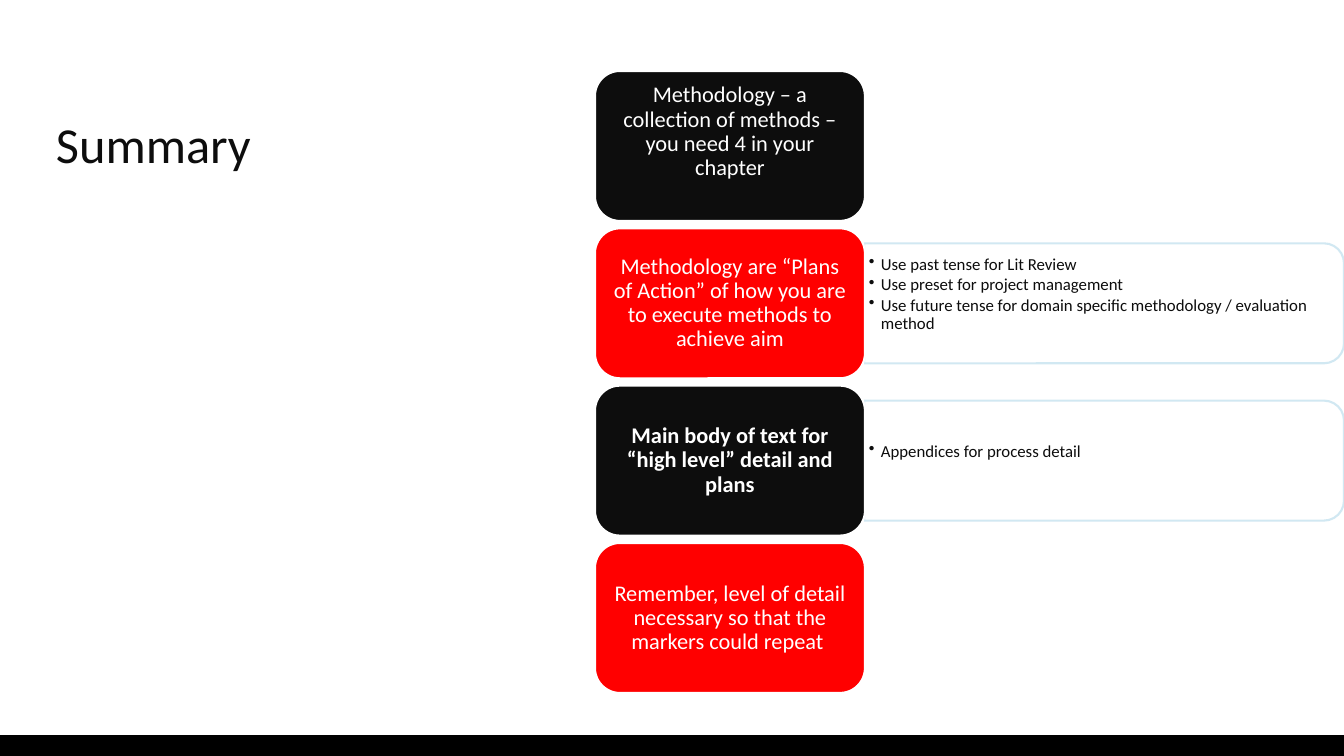
import pptx
import pptx.util
import pptx.dml.color
import pptx.enum.shapes
import pptx.enum.text
import pptx.oxml.ns
import lxml.etree

BLACK = pptx.dml.color.RGBColor(0x00, 0x00, 0x00)
INK = pptx.dml.color.RGBColor(0x0D, 0x0D, 0x0D)
RED = pptx.dml.color.RGBColor(0xFF, 0x00, 0x00)
WHITE = pptx.dml.color.RGBColor(0xFF, 0xFF, 0xFF)
PALE_BLUE = pptx.dml.color.RGBColor(0xCD, 0xE6, 0xF1)

TITLE = "Summary"
STEPS = [
    {"text": "Methodology – a collection of methods – you need 4 in your chapter",
     "color": INK, "lift": 28},
    {"text": "Methodology are “Plans of Action” of how you are to execute methods to achieve aim",
     "color": RED,
     "details": ["Use past tense for Lit Review",
                 "Use preset for project management",
                 "Use future tense for domain specific methodology / evaluation method"]},
    {"text": "Main body of text for “high level” detail and plans",
     "color": INK, "bold": True,
     "details": ["Appendices for process detail"]},
    {"text": "Remember, level of detail necessary so that the markers could repeat ",
     "color": RED},
]

FONT = "Calibri"
SLIDE_W, SLIDE_H = 1344, 756
FOOTER_H = 21
CARD_LEFT, CARD_W, CARD_H = 595, 270, 150
FIRST_TOP, LAST_TOP = 71, 543
PANEL_LEFT, PANEL_W, PANEL_H = 864, 480, 120
DETAIL_W, DETAIL_H, DETAIL_LIFT = 474, 108, 18
BULLET_INDENT = 12
SHAPES = pptx.enum.shapes.MSO_SHAPE
ALIGN = pptx.enum.text.PP_ALIGN


def px(length):
    return pptx.util.Emu(round(length * 914400 / 100.8))


def add_block(kind, left, top, width, height, fill, line=None):
    block = slide.shapes.add_shape(kind, px(left), px(top), px(width), px(height))
    block.shadow.inherit = False
    block.fill.solid()
    block.fill.fore_color.rgb = fill
    if line is None:
        block.line.fill.background()
    else:
        block.line.color.rgb = line
        block.line.width = pptx.util.Pt(1.5)
    return block


def add_box(left, top, width, height):
    return slide.shapes.add_textbox(px(left), px(top), px(width), px(height))


def write(holder, lines, size, color, insets, align=ALIGN.LEFT, after=0, bold=False, bullets=False):
    frame = holder.text_frame
    frame.word_wrap = True
    frame.vertical_anchor = pptx.enum.text.MSO_ANCHOR.MIDDLE
    frame.margin_left, frame.margin_top, frame.margin_right, frame.margin_bottom = map(px, insets)
    frame.text = "\n".join(lines)
    for paragraph in frame.paragraphs:
        if bullets:
            properties = paragraph._p.get_or_add_pPr()
            properties.set("marL", str(px(BULLET_INDENT)))
            properties.set("indent", str(-px(BULLET_INDENT)))
            bullet = lxml.etree.SubElement(properties, pptx.oxml.ns.qn("a:buChar"))
            bullet.set("char", "•")
        paragraph.alignment = align
        paragraph.line_spacing = 0.9
        paragraph.space_after = pptx.util.Pt(after)
        for run in paragraph.runs:
            run.font.name = FONT
            run.font.size = pptx.util.Pt(size)
            run.font.bold = bold
            run.font.color.rgb = color


def add_details(details, middle):
    panel = add_block(SHAPES.ROUND_2_SAME_RECTANGLE,
                      PANEL_LEFT + (PANEL_W - PANEL_H) / 2, middle - PANEL_W / 2,
                      PANEL_H, PANEL_W, WHITE, PALE_BLUE)
    panel.rotation = 90
    for tint in panel._element.spPr.iter(pptx.oxml.ns.qn("a:srgbClr")):
        lxml.etree.SubElement(tint, pptx.oxml.ns.qn("a:alpha")).set("val", "90000")
    notes = add_box(PANEL_LEFT, middle - DETAIL_H / 2, DETAIL_W, DETAIL_H)
    write(notes, details, 12, INK, (5, 3, 5, 3 + DETAIL_LIFT), after=1.8, bullets=True)


presentation = pptx.Presentation()
presentation.slide_width, presentation.slide_height = px(SLIDE_W), px(SLIDE_H)
slide = presentation.slides.add_slide(presentation.slide_layouts[6])

add_block(SHAPES.RECTANGLE, 0, SLIDE_H - FOOTER_H, SLIDE_W, FOOTER_H, BLACK)
write(add_box(56, 107, 1231, 80), [TITLE], 36, INK, (0, 5, 0, 5))

pitch = (LAST_TOP - FIRST_TOP) / (len(STEPS) - 1)
for index, step in enumerate(STEPS):
    top = FIRST_TOP + index * pitch
    if "details" in step:
        add_details(step["details"], top + CARD_H / 2)
    card = add_block(SHAPES.ROUNDED_RECTANGLE, CARD_LEFT, top, CARD_W, CARD_H, step["color"], WHITE)
    write(card, [step["text"]], 16, WHITE, (7, 3, 7, 3 + step.get("lift", 0)),
          align=ALIGN.CENTER, after=5.6, bold=step.get("bold", False))

presentation.save("out.pptx")
